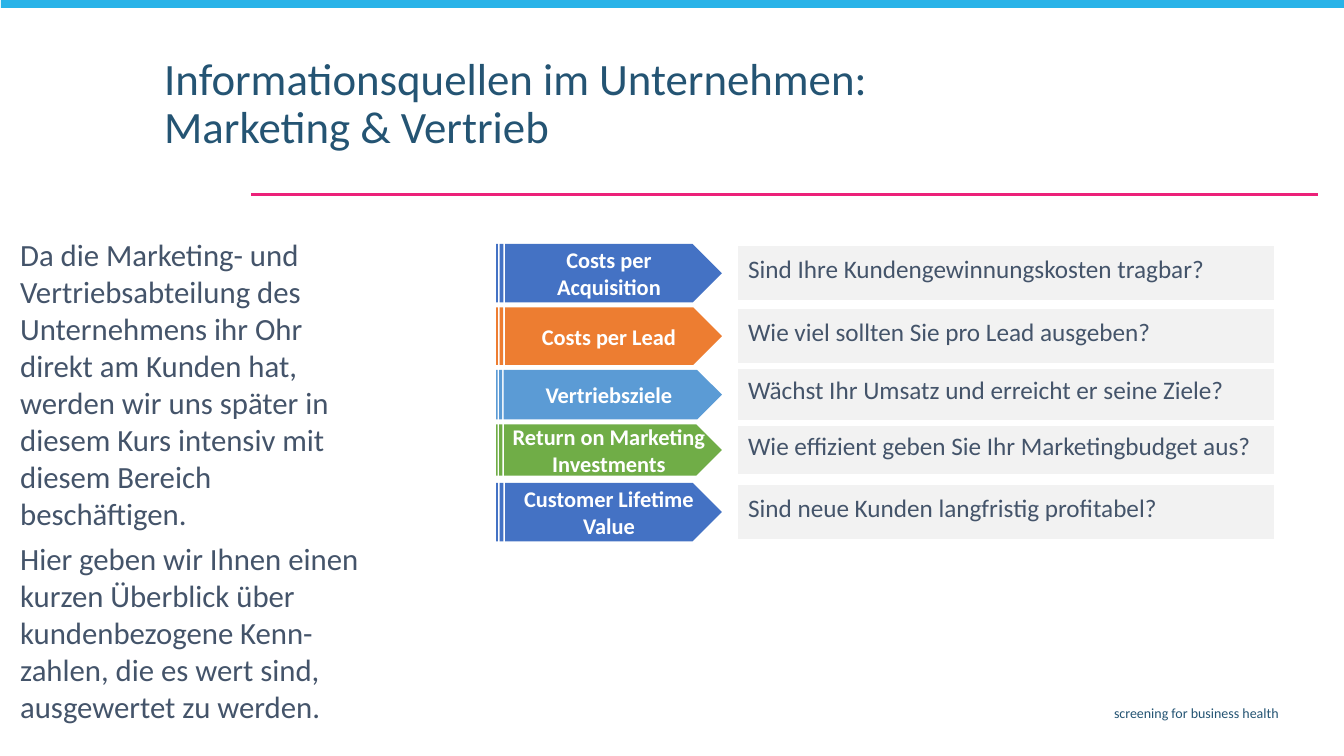
from collections import namedtuple
from pptx import Presentation
from pptx.dml.color import RGBColor
from pptx.enum.shapes import MSO_CONNECTOR, MSO_SHAPE
from pptx.enum.text import MSO_ANCHOR, PP_ALIGN
from pptx.oxml.ns import qn
from pptx.util import Inches, Pt
from lxml.etree import SubElement

SLIDE_WIDTH, SLIDE_HEIGHT = Inches(13.33), Inches(7.5)
COLUMN, ROW = SLIDE_WIDTH / 133.3, SLIDE_HEIGHT / 75

COLOURS = {
    "background": "FFFFFF",
    "band": "29B3E8",
    "rule": "EC2179",
    "heading": "245473",
    "body": "44546A",
    "panel": "F2F2F2",
    "blue": "4472C4",
    "orange": "ED7D31",
    "sky": "5B9BD5",
    "green": "70AD47",
}

Box = namedtuple("Box", "left top width height")
Metric = namedtuple("Metric", "label question colour middle arrow_height panel_height")

TITLE = "Informationsquellen im Unternehmen: Marketing & Vertrieb"
FOOTER = "screening for business health"
INTRODUCTION = [
    "Da die Marketing- und Vertriebsabteilung des Unternehmens ihr Ohr direkt am Kunden hat, "
    "werden wir uns später in diesem Kurs intensiv mit diesem Bereich beschäftigen.",
    "Hier geben wir Ihnen einen kurzen Überblick über kundenbezogene Kenn-zahlen, "
    "die es wert sind, ausgewertet zu werden.",
]
METRICS = [
    Metric("Costs per\vAcquisition", "Sind Ihre Kundengewinnungskosten tragbar?", "blue", 3.1, 5.8, 5.8),
    Metric("Costs per Lead", "Wie viel sollten Sie pro Lead ausgeben?", "orange", 9.35, 5.7, 5.8),
    Metric("Vertriebsziele", "Wächst Ihr Umsatz und erreicht er seine Ziele?", "sky", 15.15, 4.9, 5.5),
    Metric("Return on Marketing\vInvestments", "Wie effizient geben Sie Ihr Marketingbudget aus?",
           "green", 20.65, 5.1, 5.2),
    Metric("Customer Lifetime Value", "Sind neue Kunden langfristig profitabel?", "blue", 26.8, 5.8, 5.8),
]


def colour(name):
    return RGBColor.from_string(COLOURS[name])


def place(box):
    return (round(box.left * COLUMN), round(box.top * ROW),
            round(box.width * COLUMN), round(box.height * ROW))


def apply(target, values):
    for name, value in values.items():
        setattr(target, name, value)


def add_text(slide, box, paragraphs, size, text_colour, bold=False, frame_format=None,
             paragraph_format=None, gap=0):
    frame = slide.shapes.add_textbox(*place(box)).text_frame
    apply(frame, {"word_wrap": True, **(frame_format or {})})
    for index, text in enumerate(paragraphs):
        paragraph = frame.add_paragraph() if index else frame.paragraphs[0]
        paragraph.text = text
        apply(paragraph, {"space_before": Pt(gap if index else 0), **(paragraph_format or {})})
        for run in paragraph.runs:
            apply(run.font, {"name": "Calibri", "size": Pt(size), "bold": bold})
            run.font.color.rgb = colour(text_colour)


def add_block(slide, preset, box, fill, outline=None):
    shape = slide.shapes.add_shape(preset, *place(box))
    shape.shadow.inherit = False
    shape.fill.solid()
    shape.fill.fore_color.rgb = colour(fill)
    if outline:
        shape.line.color.rgb = colour(outline)
        shape.line.width = Pt(3)
    else:
        shape.line.fill.background()
    return shape


def add_header(slide, box):
    add_block(slide, MSO_SHAPE.RECTANGLE, Box(box.left, box.top, box.width, 1), "band")
    left, top, width, _ = place(Box(box.left + 24.8, box.top + 19.5, 105.8, 0))
    rule = slide.shapes.add_connector(MSO_CONNECTOR.STRAIGHT, left, top, left + width, top)
    rule.line.color.rgb = colour("rule")
    rule.line.width = Pt(1.5)
    SubElement(rule._element.spPr, qn("a:effectLst"))
    add_text(slide, Box(box.left + 15.2, box.top + 5.3, 84.1, 14.5), [TITLE], 32, "heading",
             paragraph_format={"line_spacing": 0.9})


def add_introduction(slide, box):
    margins = {"margin_left": Inches(0.09), "margin_right": Inches(0.09),
               "margin_top": Inches(0.04), "margin_bottom": Inches(0.04)}
    add_text(slide, box, INTRODUCTION, 22, "body", frame_format=margins, gap=6)


def add_metric(slide, box, metric):
    middle = box.top + metric.middle
    arrow_width, label_width, label_height = 22.4, 23.3, 6.4
    arrow_box = Box(box.left, middle - metric.arrow_height / 2, arrow_width, metric.arrow_height)
    arrow = add_block(slide, MSO_SHAPE.STRIPED_RIGHT_ARROW, arrow_box, metric.colour)
    arrow.adjustments[0], arrow.adjustments[1] = 1, 0.5
    label_box = Box(box.left + (arrow_width - label_width) / 2, middle - label_height / 2,
                    label_width, label_height)
    add_text(slide, label_box, [metric.label], 16, "background", bold=True,
             frame_format={"vertical_anchor": MSO_ANCHOR.MIDDLE},
             paragraph_format={"alignment": PP_ALIGN.CENTER})

    panel_left, panel_width = box.left + 23.8, box.width - 23.8
    panel_box = Box(panel_left, middle - metric.panel_height / 2, panel_width, metric.panel_height)
    add_block(slide, MSO_SHAPE.RECTANGLE, panel_box, "panel", "background")
    margins = {"margin_left": Inches(0.04), "margin_right": Inches(0.04),
               "margin_top": Inches(0.02), "margin_bottom": Inches(0.02)}
    add_text(slide, Box(panel_left + 0.8, middle - 1, panel_width - 1.3, 2.4),
             [metric.question], 18, "body", frame_format=margins,
             paragraph_format={"line_spacing": Pt(13.1)})


def add_metrics(slide, box):
    for metric in METRICS:
        add_metric(slide, box, metric)


def add_footer(slide, box):
    add_text(slide, box, [FOOTER], 10, "heading", paragraph_format={"alignment": PP_ALIGN.RIGHT})


def main():
    presentation = Presentation()
    apply(presentation, {"slide_width": SLIDE_WIDTH, "slide_height": SLIDE_HEIGHT})
    slide = presentation.slides.add_slide(presentation.slide_layouts[6])
    slide.background.fill.solid()
    slide.background.fill.fore_color.rgb = colour("background")
    add_header(slide, Box(0.1, -0.2, 133.4, 20))
    add_introduction(slide, Box(1.1, 23, 37.4, 46.2))
    add_metrics(slide, Box(49.2, 24, 77.4, 30))
    add_footer(slide, Box(36.5, 69.4, 91.3, 2.9))
    presentation.save("out.pptx")


if __name__ == "__main__":
    main()
